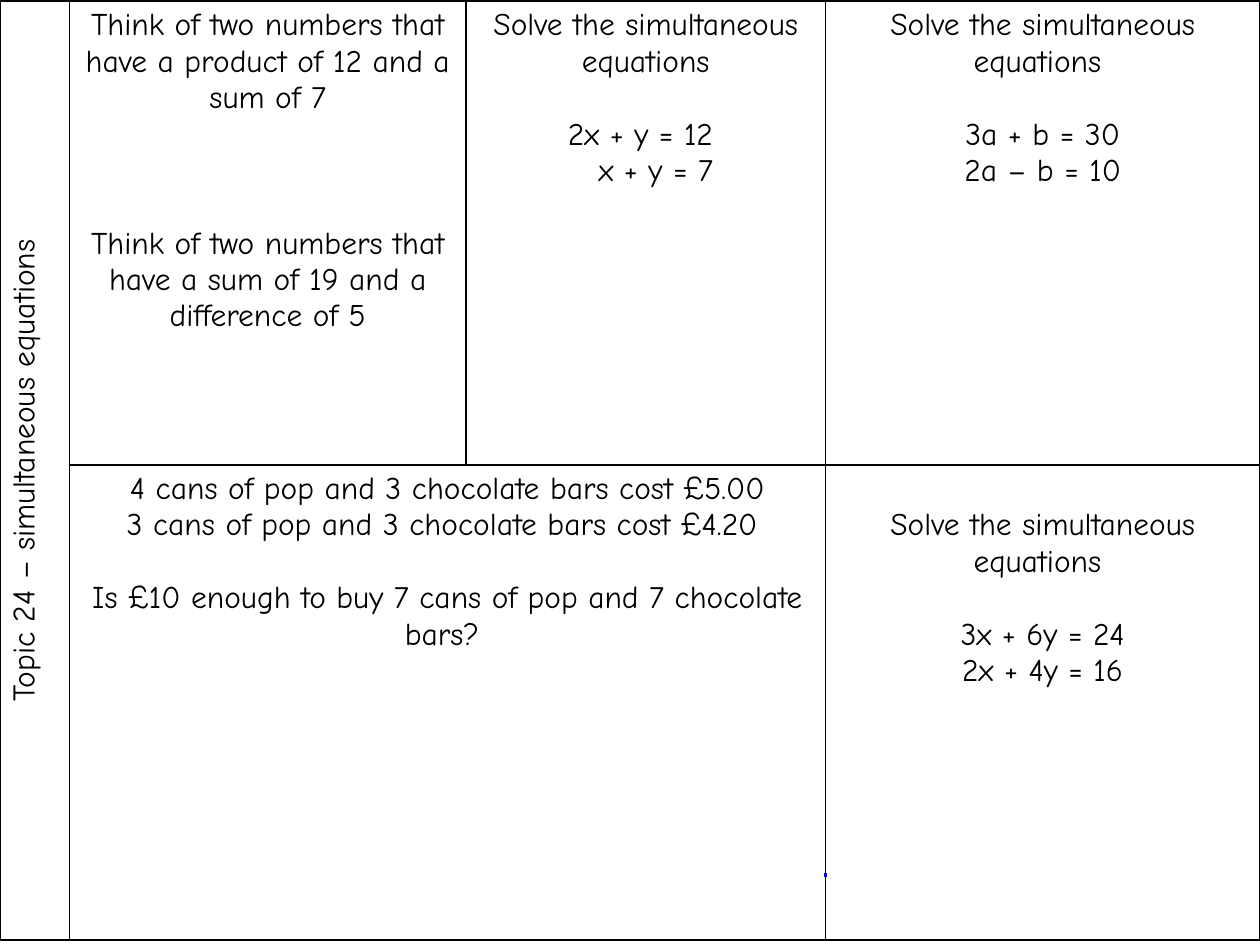
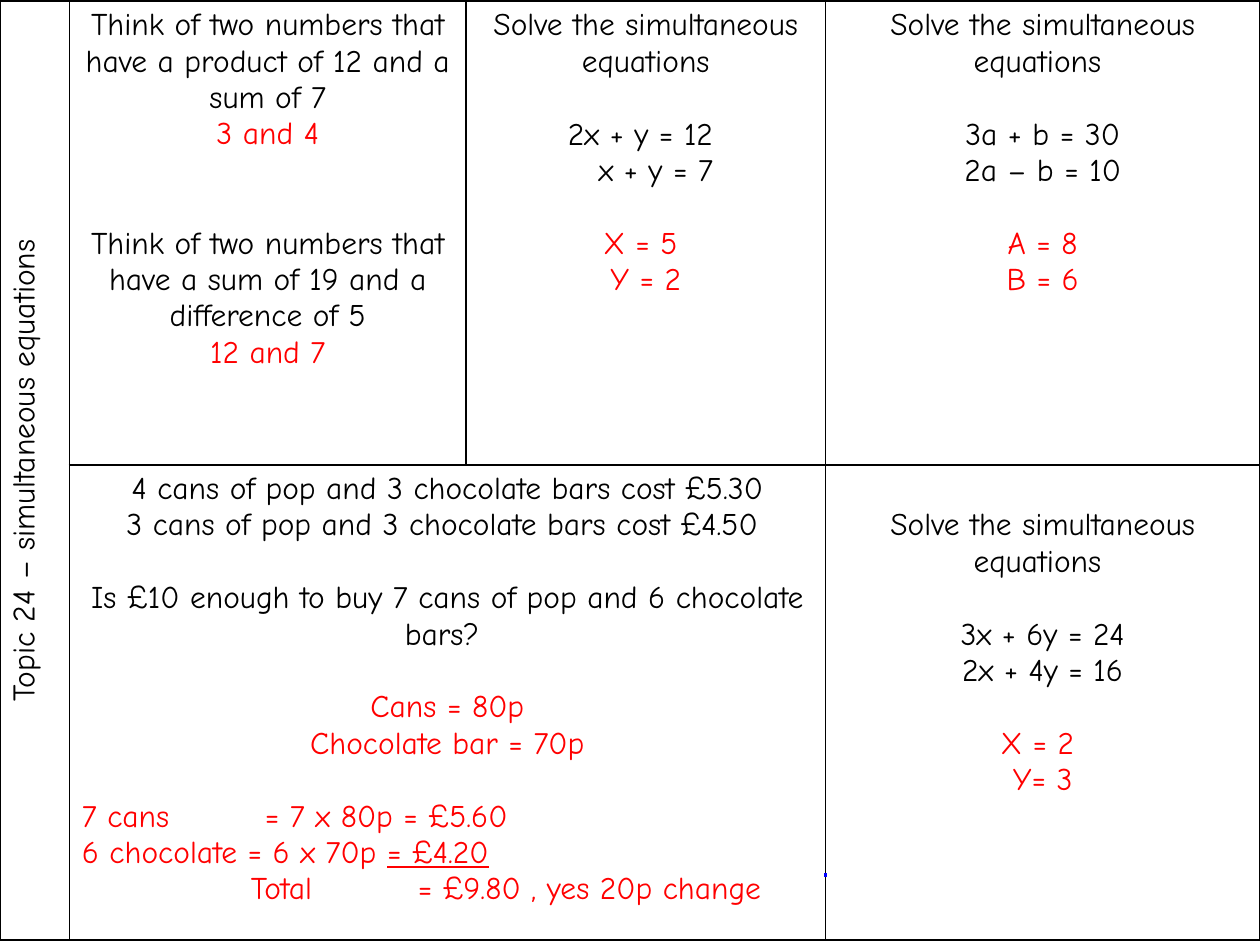
from dataclasses import dataclass

import pptx
import pptx.dml.color
import pptx.enum.text
import pptx.oxml.ns
import pptx.presentation
import pptx.slide
import pptx.table
import pptx.text.text
import pptx.util
from lxml import etree

Pt = pptx.util.Pt
qn = pptx.oxml.ns.qn
ALIGN = pptx.enum.text.PP_ALIGN

COLOURS = {"text": "000000", "answer": "FF0000", "border": "000000", "mark": "0000FF"}
FONT = "Comic Neue"
FONT_SIZE = 18
LINE_HEIGHT = 20.8
TABLE_TOP = 0.7
COLUMN_WIDTHS = (39.6, 226.8, 205.2, 248.4)
ROW_HEIGHT = 265
CELL_MARGIN = 3.6
WORKING_TABS = (96.5, 104.6, 192)
TOPIC = "Topic 24 – simultaneous equations"
SOLVE = "Solve the simultaneous equations"


@dataclass(frozen=True)
class Line:
    text: str
    gap: int = 0  # empty lines above
    answer: bool = False
    underlined: str = ""
    indent: float = 0
    tabs: tuple[float, ...] = ()


@dataclass(frozen=True)
class Question:
    row: int
    column: int
    lines: tuple[Line, ...]
    top_gap: int = 0


@dataclass(frozen=True)
class Sheet:
    cans_price: str
    smaller_price: str
    bars: int
    show_answers: bool


SHEETS = (
    Sheet("£5.00", "£4.20", 7, False),
    Sheet("£5.30", "£4.50", 6, True),
)


def answer(text: str, gap: int = 0, underlined: str = "",
           tabs: tuple[float, ...] = ()) -> Line:
    return Line(text, gap, True, underlined, 0, tabs)


def questions(sheet: Sheet) -> tuple[Question, ...]:
    return (
        Question(0, 1, (
            Line("Think of two numbers that have a product of 12 and a sum of 7"),
            answer("3 and 4"),
            Line("Think of two numbers that have a sum of 19 and a difference of 5", gap=2),
            answer("12 and 7"),
        )),
        Question(0, 2, (
            Line(SOLVE),
            Line("2x + y = 12 ", gap=1),
            Line("x + y = 7", indent=11.5),
            answer("X = 5 ", gap=1),
            answer("Y = 2"),
        )),
        Question(0, 3, (
            Line(SOLVE + " "),
            Line("3a + b = 30", gap=1),
            Line("2a – b = 10"),
            answer("A = 8", gap=1),
            answer("B = 6"),
        )),
        Question(1, 1, (
            Line(f"4 cans of pop and 3 chocolate bars cost {sheet.cans_price}"),
            Line(f"3 cans of pop and 3 chocolate bars cost {sheet.smaller_price} "),
            Line(f"Is £10 enough to buy 7 cans of pop and {sheet.bars} chocolate bars? ", gap=1),
            answer("Cans = 80p", gap=1),
            answer("Chocolate bar = 70p"),
            answer("7 cans\t= 7 x 80p = £5.60", gap=1, tabs=WORKING_TABS[1:]),
            answer("6 chocolate = 6 x 70p ", underlined="= £4.20", tabs=WORKING_TABS),
            answer("\tTotal\t= £9.80 , yes 20p change", tabs=WORKING_TABS[::2]),
        )),
        Question(1, 3, (
            Line(SOLVE + " "),
            Line("3x + 6y = 24", gap=1),
            Line("2x + 4y = 16"),
            answer("X = 2 ", gap=1),
            answer("Y= 3"),
        ), top_gap=1),
    )


def rgb(name: str) -> pptx.dml.color.RGBColor:
    return pptx.dml.color.RGBColor.from_string(COLOURS[name])


def add_run(paragraph: pptx.text.text._Paragraph, text: str, colour: str,
            underline: bool = False) -> None:
    run = paragraph.add_run()
    run.text = text
    run.font.name = FONT
    run.font.size = Pt(FONT_SIZE)
    run.font.color.rgb = rgb(colour)
    if underline:
        run.font.underline = True


def write_line(paragraph: pptx.text.text._Paragraph, line: Line, gap: int) -> None:
    properties = paragraph._p.get_or_add_pPr()
    if line.indent:
        properties.set("marL", str(Pt(line.indent)))
    if line.tabs:
        tab_list = etree.SubElement(properties, qn("a:tabLst"))
        for position in line.tabs:
            etree.SubElement(tab_list, qn("a:tab"), pos=str(Pt(position)), algn="l")
    paragraph.alignment = ALIGN.LEFT if line.tabs else ALIGN.CENTER
    if gap:
        paragraph.space_before = Pt(gap * LINE_HEIGHT)
    colour = "answer" if line.answer else "text"
    add_run(paragraph, line.text, colour)
    if line.underlined:
        add_run(paragraph, line.underlined, colour, underline=True)


def fill_cell(cell: pptx.table._Cell, question: Question, show_answers: bool) -> None:
    """Write the lines; a hidden answer leaves its room to the next line."""
    cell.margin_top = Pt(CELL_MARGIN + question.top_gap * LINE_HEIGHT)
    hidden = 0
    for index, line in enumerate(question.lines):
        if line.answer and not show_answers:
            hidden += line.gap + 1
            continue
        frame = cell.text_frame
        paragraph = frame.add_paragraph() if index else frame.paragraphs[0]
        write_line(paragraph, line, line.gap + hidden)
        hidden = 0


def style_cell(cell: pptx.table._Cell) -> None:
    properties = cell._tc.get_or_add_tcPr()
    for side in ("lnL", "lnR", "lnT", "lnB"):
        border = etree.SubElement(properties, qn(f"a:{side}"), w=str(Pt(1)))
        solid = etree.SubElement(border, qn("a:solidFill"))
        etree.SubElement(solid, qn("a:srgbClr"), val=COLOURS["border"])
    cell.fill.background()


def add_question_table(slide: pptx.slide.Slide, sheet: Sheet) -> None:
    table = slide.shapes.add_table(
        2, len(COLUMN_WIDTHS), Pt(0), Pt(TABLE_TOP),
        Pt(sum(COLUMN_WIDTHS)), Pt(2 * ROW_HEIGHT)).table
    table.first_row = False
    table.horz_banding = False
    for column, width in zip(table.columns, COLUMN_WIDTHS):
        column.width = Pt(width)
    for row in table.rows:
        row.height = Pt(ROW_HEIGHT)
    for cell in table.iter_cells():
        style_cell(cell)

    topic_cell = table.cell(0, 0)
    topic_cell.merge(table.cell(1, 0))
    topic_cell._tc.get_or_add_tcPr().set("vert", "vert270")
    write_line(topic_cell.text_frame.paragraphs[0], Line(TOPIC), 0)

    table.cell(1, 1).merge(table.cell(1, 2))
    for question in questions(sheet):
        fill_cell(table.cell(question.row, question.column), question, sheet.show_answers)


def add_pen_mark(slide: pptx.slide.Slide) -> None:
    left, bottom, step = 471.6, 501.1, 0.72
    builder = slide.shapes.build_freeform(Pt(left), Pt(bottom))
    builder.add_line_segments(
        [(Pt(left), Pt(bottom - step * count)) for count in (1, 2, 3)], close=False)
    mark = builder.convert_to_shape()
    mark.shadow.inherit = False
    mark.fill.background()
    mark.line.color.rgb = rgb("mark")
    mark.line.width = Pt(1.5)


def main() -> None:
    presentation = pptx.Presentation()
    presentation.slide_width = Pt(720)
    presentation.slide_height = Pt(540)
    for sheet in SHEETS:
        slide = presentation.slides.add_slide(presentation.slide_layouts[6])
        add_question_table(slide, sheet)
        add_pen_mark(slide)
    presentation.save("out.pptx")


if __name__ == "__main__":
    main()
